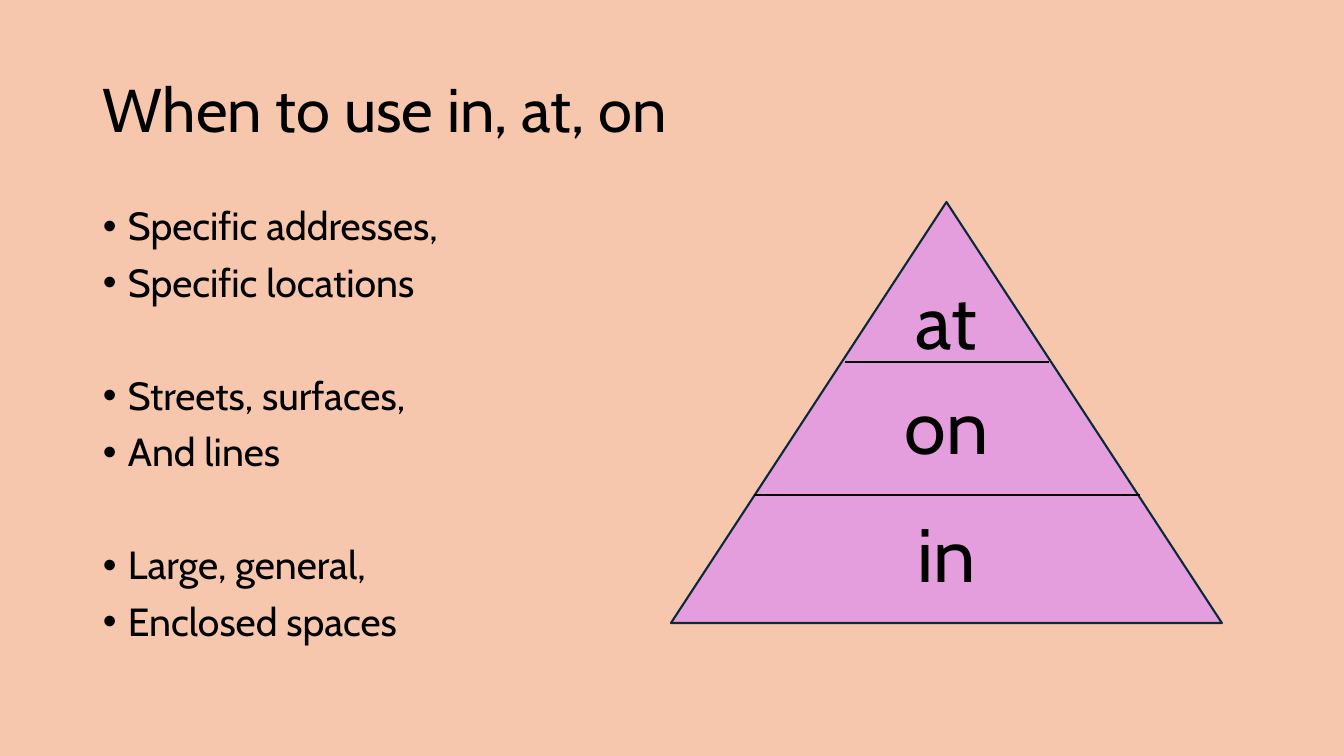
import pptx
import pptx.util
import pptx.dml.color
import pptx.enum.shapes
import pptx.enum.text
import pptx.oxml
import lxml.etree

PX = 12192000 / 1344
PP_ALIGN = pptx.enum.text.PP_ALIGN
MSO_ANCHOR = pptx.enum.text.MSO_ANCHOR


def color(value):
    return pptx.dml.color.RGBColor.from_string(value)


def add_text(box, lines, size, anchor, wrap, formats):
    left, top, width, height = [round(v * PX) for v in box]
    tf = s.shapes.add_textbox(left, top, width, height).text_frame
    tf.word_wrap = wrap
    tf.vertical_anchor = anchor
    for i, line in enumerate(lines):
        p = tf.add_paragraph() if i else tf.paragraphs[0]
        for name, value in formats.items():
            setattr(p, name, value)
        r = p.add_run()
        r.text = line
        r.font.name = "Cabin"
        r.font.size = pptx.util.Pt(size)
        r.font.color.rgb = color("000000")
    return tf


prs = pptx.Presentation()
prs.slide_width = round(1344 * PX)
prs.slide_height = round(756 * PX)
s = prs.slides.add_slide(prs.slide_layouts[6])
s.background.fill.solid()
s.background.fill.fore_color.rgb = color("F6C6AD")

add_text((93, 40, 1159, 146), ["When to use in, at, on"], 44,
         MSO_ANCHOR.MIDDLE, True, {"line_spacing": 0.9})

groups = [
    ["Specific addresses,", "Specific locations"],
    ["Streets, surfaces,", "And lines"],
    ["Large, general,", "Enclosed spaces"],
]
tf = add_text((93, 202, 1159, 480), sum(groups, []), 28, MSO_ANCHOR.TOP, True,
              {"line_spacing": 0.9, "space_before": pptx.util.Pt(10)})
for p in tf.paragraphs:
    pPr = p._p.get_or_add_pPr()
    indent = round(25 * PX)
    pPr.set("marL", str(indent))
    pPr.set("indent", str(-indent))
    font = lxml.etree.SubElement(pPr, pptx.oxml.ns.qn("a:buFont"))
    font.set("typeface", "Arial")
    bullet = lxml.etree.SubElement(pPr, pptx.oxml.ns.qn("a:buChar"))
    bullet.set("char", "•")
for p in tf.paragraphs[2::2]:
    p.space_before = pptx.util.Pt(50.5)

sp = s.shapes.add_shape(pptx.enum.shapes.MSO_SHAPE.ISOSCELES_TRIANGLE,
                        *[round(v * PX) for v in (671, 202, 551, 421)])
sp.shadow.inherit = False
sp.fill.solid()
sp.fill.fore_color.rgb = color("E59EDD")
sp.line.color.rgb = color("092A39")
sp.line.width = pptx.util.Pt(1.5)

for left, right, y in [(845, 1049, 362), (754, 1140, 495)]:
    line = s.shapes.add_connector(pptx.enum.shapes.MSO_CONNECTOR.STRAIGHT,
                                  *[round(v * PX) for v in (left, y, right, y)])
    line.line.color.rgb = color("000000")
    line.line.width = pptx.util.Pt(1.5)
    lxml.etree.SubElement(line._element.spPr, pptx.oxml.ns.qn("a:effectLst"))

for word, top in [("at", 269), ("on", 374), ("in", 502)]:
    add_text((894, top, 105, 102), [word], 54, MSO_ANCHOR.TOP, False,
             {"alignment": PP_ALIGN.CENTER})

prs.save("out.pptx")
